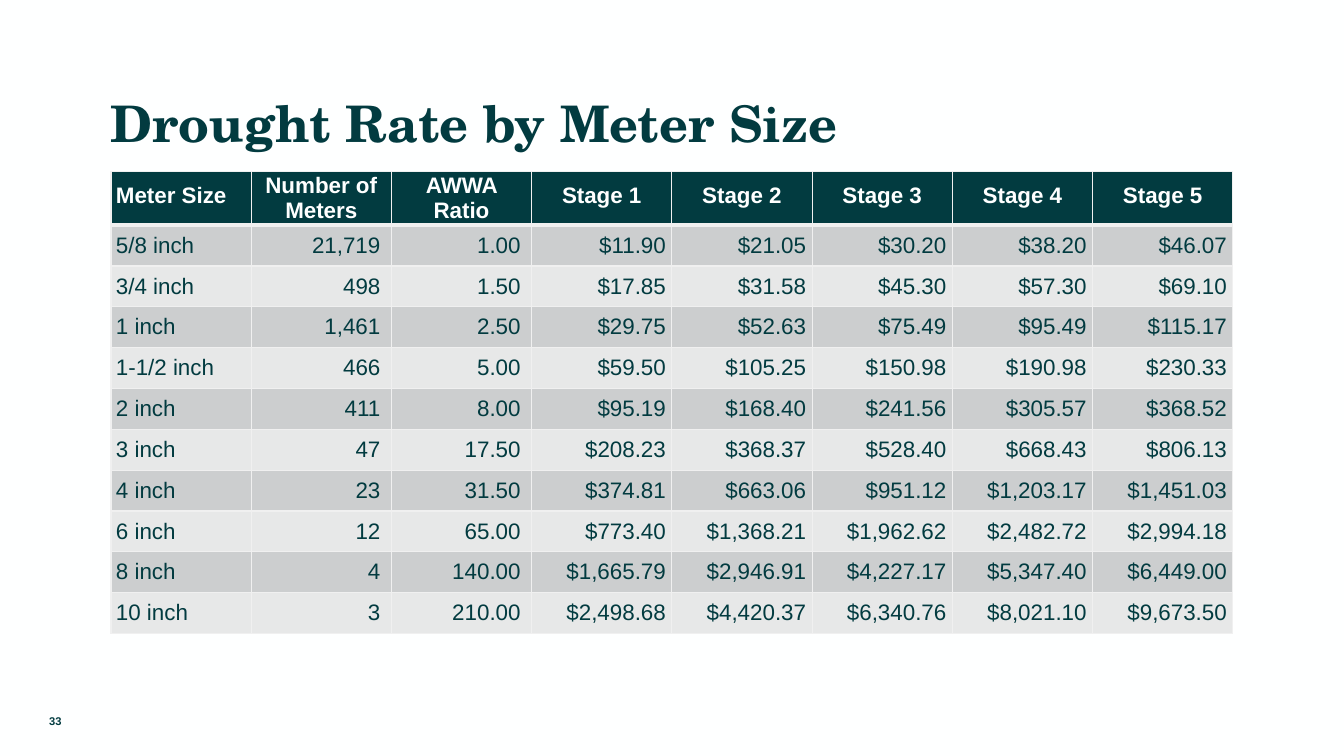
from lxml.etree import SubElement
from pptx import Presentation
from pptx.dml.color import RGBColor
from pptx.enum.text import MSO_ANCHOR as Anchor, PP_ALIGN as Align
from pptx.oxml.ns import qn
from pptx.util import Inches, Pt

TITLE = "Drought Rate by Meter Size"
PAGE_NUMBER = "33"
HEADERS = ["Meter Size", "Number of Meters", "AWWA Ratio",
           "Stage 1", "Stage 2", "Stage 3", "Stage 4", "Stage 5"]
RATES = [
    ("5/8 inch", "21,719", "1.00", "$11.90", "$21.05", "$30.20", "$38.20", "$46.07"),
    ("3/4 inch", "498", "1.50", "$17.85", "$31.58", "$45.30", "$57.30", "$69.10"),
    ("1 inch", "1,461", "2.50", "$29.75", "$52.63", "$75.49", "$95.49", "$115.17"),
    ("1-1/2 inch", "466", "5.00", "$59.50", "$105.25", "$150.98", "$190.98", "$230.33"),
    ("2 inch", "411", "8.00", "$95.19", "$168.40", "$241.56", "$305.57", "$368.52"),
    ("3 inch", "47", "17.50", "$208.23", "$368.37", "$528.40", "$668.43", "$806.13"),
    ("4 inch", "23", "31.50", "$374.81", "$663.06", "$951.12", "$1,203.17", "$1,451.03"),
    ("6 inch", "12", "65.00", "$773.40", "$1,368.21", "$1,962.62", "$2,482.72", "$2,994.18"),
    ("8 inch", "4", "140.00", "$1,665.79", "$2,946.91", "$4,227.17", "$5,347.40", "$6,449.00"),
    ("10 inch", "3", "210.00", "$2,498.68", "$4,420.37", "$6,340.76", "$8,021.10", "$9,673.50"),
]
TEAL, WHITE, BORDER = "023B40", "FEFFFF", "F0F0F0"
BANDS = ["CCCECF", "E7E8E8"]
FIRST_STAGE = 3

TITLE_FONT = {"name": "TeX Gyre Schola", "size": Pt(36), "bold": True}
NUMBER_FONT = {"name": "Arial", "size": Pt(8), "bold": True}
HEADER_FONT = {"name": "Arial", "size": Pt(16), "bold": True}
BODY_FONT = {**HEADER_FONT, "bold": False}


def color(hex_text):
    return RGBColor.from_string(hex_text)


def set_margins(target, margins):
    for side, margin in zip(("left", "top", "right", "bottom"), margins):
        setattr(target, f"margin_{side}", Inches(margin))


def write(frame, text, font_format, font_color, align):
    paragraph = frame.paragraphs[0]
    paragraph.text = text
    paragraph.alignment = align
    for name, value in font_format.items():
        setattr(paragraph.font, name, value)
    paragraph.font.color.rgb = color(font_color)


def add_text(slide, box, text, font_format, align, anchor, margins):
    frame = slide.shapes.add_textbox(*map(Inches, box)).text_frame
    frame.word_wrap = True
    frame.vertical_anchor = anchor
    set_margins(frame, margins)
    write(frame, text, font_format, TEAL, align)


def set_borders(cell, row):
    """Thin rules all round, with a heavy one under the header row."""
    widths = {"lnL": 1, "lnR": 1, "lnT": 3 if row == 1 else 1, "lnB": 3 if row == 0 else 1}
    properties = cell._tc.get_or_add_tcPr()
    for tag, width in widths.items():
        line = SubElement(properties, qn(f"a:{tag}"), w=str(Pt(width)))
        SubElement(SubElement(line, qn("a:solidFill")), qn("a:srgbClr"), val=BORDER)


def cell_layout(row, column):
    """Alignment and left, top, right, bottom margins of a cell."""
    if row == 0:
        align = Align.CENTER if column else Align.LEFT
        return align, (0.05, 0, 0.05, 0 if column in (1, 2) else 0.05)
    if column == 0:
        return Align.LEFT, (0.05, 0, 0.05, 0)
    if column < FIRST_STAGE:
        return Align.RIGHT, (0.05, 0, 0.11, 0)
    return Align.RIGHT, (0, 0, 0.06, 0)


def add_rate_table(slide):
    rows = [HEADERS, *RATES]
    box = map(Inches, (1.1, 1.7, 11.13, 4.46))
    table = slide.shapes.add_table(len(rows), len(HEADERS), *box).table
    for row, texts in enumerate(rows):
        header = row == 0
        fill = TEAL if header else BANDS[(row - 1) % 2]
        for column, text in enumerate(texts):
            cell = table.cell(row, column)
            align, margins = cell_layout(row, column)
            set_borders(cell, row)
            set_margins(cell, margins)
            cell.fill.solid()
            cell.fill.fore_color.rgb = color(fill)
            cell.vertical_anchor = Anchor.MIDDLE
            write(cell.text_frame, text, HEADER_FONT if header else BODY_FONT,
                  WHITE if header else TEAL, align)


def main():
    presentation = Presentation()
    presentation.slide_width = Inches(13.33)
    presentation.slide_height = Inches(7.5)
    slide = presentation.slides.add_slide(presentation.slide_layouts[6])
    slide.background.fill.solid()
    slide.background.fill.fore_color.rgb = color(WHITE)
    add_text(slide, (1.1, 0.64, 11.13, 0.87), TITLE, TITLE_FONT,
             Align.LEFT, Anchor.BOTTOM, (0, 0.21, 0, 0))
    add_rate_table(slide)
    add_text(slide, (0, 6.95, 1.1, 0.4), PAGE_NUMBER, NUMBER_FONT,
             Align.CENTER, Anchor.MIDDLE, (0.1, 0.05, 0.1, 0.05))
    presentation.save("out.pptx")


if __name__ == "__main__":
    main()
